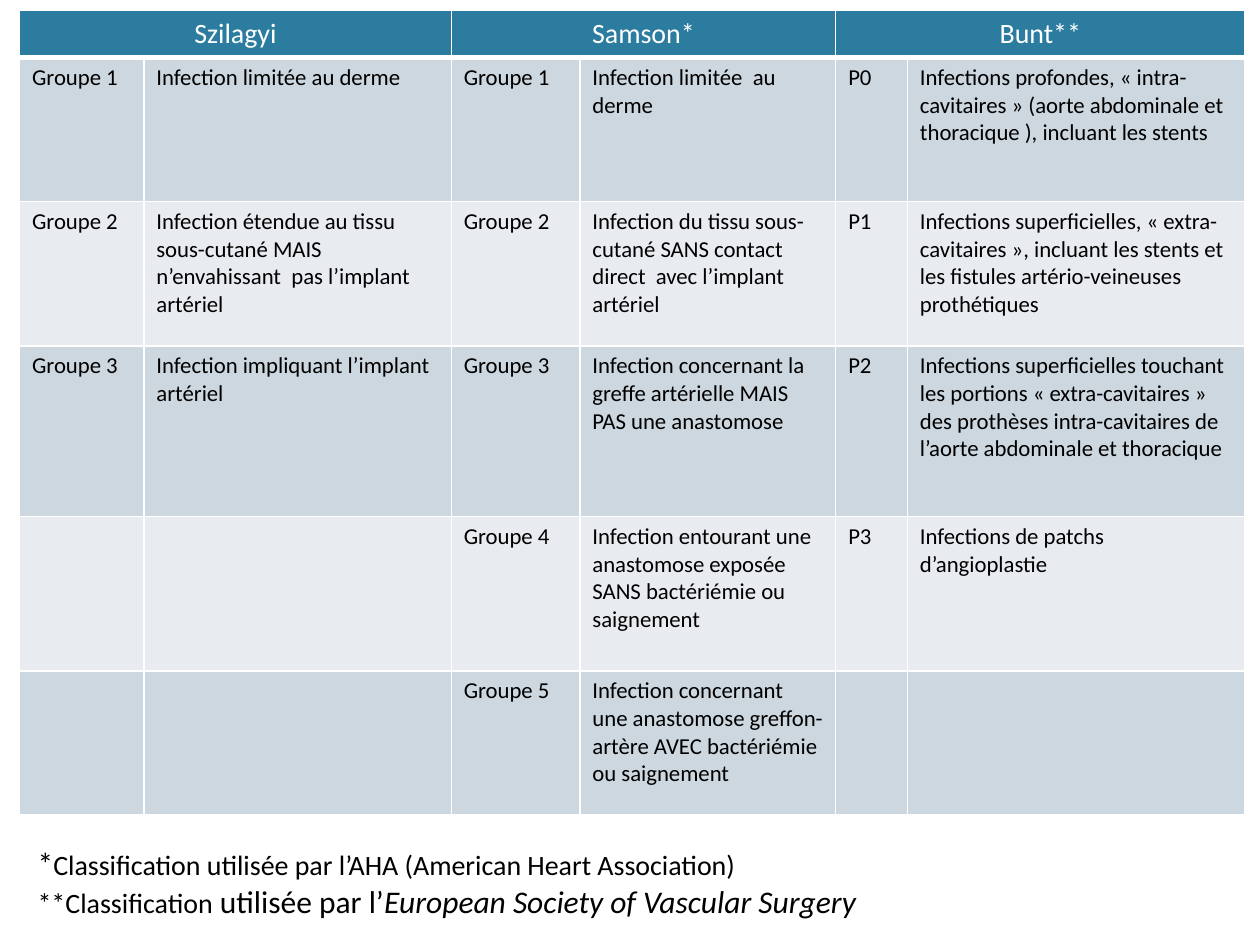
from lxml.etree import SubElement
from pptx import Presentation
from pptx.dml.color import RGBColor
from pptx.enum.text import PP_ALIGN
from pptx.oxml.ns import qn
from pptx.util import Pt

FONT = "Calibri"
WHITE = RGBColor(0xFF, 0xFF, 0xFF)
BLACK = RGBColor(0, 0, 0)
HEADER_BLUE = RGBColor(0x2C, 0x7C, 0x9F)
BANDS = [RGBColor(0xCD, 0xD7, 0xDF), RGBColor(0xE8, 0xEC, 0xF0)]

COLUMN_WIDTHS = [71, 175.7, 73.5, 146.2, 41, 193]
ROW_HEIGHTS = [26.3, 82.3, 82.5, 97.5, 88.3, 82.1]
HEADERS = ["Szilagyi", "Samson*", "Bunt**"]
ROWS = [
    ["Groupe 1", "Infection limitée au derme",
     "Groupe 1", "Infection limitée  au derme",
     "P0", "Infections profondes, « intra-cavitaires » (aorte abdominale et "
     "thoracique ), incluant les stents"],
    ["Groupe 2", "Infection étendue au tissu sous-cutané MAIS n’envahissant  pas "
     "l’implant artériel",
     "Groupe 2", "Infection du tissu sous-cutané SANS contact direct  avec "
     "l’implant artériel",
     "P1", "Infections superficielles, « extra-cavitaires », incluant les stents "
     "et les fistules artério-veineuses prothétiques"],
    ["Groupe 3", "Infection impliquant l’implant artériel",
     "Groupe 3", "Infection concernant la greffe artérielle MAIS PAS une anastomose",
     "P2", "Infections superficielles touchant les portions « extra-cavitaires » "
     "des prothèses intra-cavitaires de l’aorte abdominale et thoracique"],
    ["", "",
     "Groupe 4", "Infection entourant une anastomose exposée SANS bactériémie ou "
     "saignement",
     "P3", "Infections de patchs d’angioplastie"],
    ["", "",
     "Groupe 5", "Infection concernant une anastomose greffon-artère AVEC "
     "bactériémie ou saignement",
     "", ""],
]
# Each note is a list of (text, size, italic) spans.
NOTES = [
    [("*", 18, False),
     ("Classification utilisée par l’AHA (American Heart Association)", 16, False)],
    [("**Classification", 16, False), (" utilisée par l’", 18, False),
     ("European Society of Vascular Surgery", 18, True)],
]


def style_font(font, size, color, italic=False):
    font.name = FONT
    font.size = Pt(size)
    font.bold = False
    font.italic = italic
    font.color.rgb = color


def set_borders(cell, bottom_width=1):
    """Draw white cell borders; call before the fill, which must follow them."""
    properties = cell._tc.get_or_add_tcPr()
    for side, width in (("L", 1), ("R", 1), ("T", 1), ("B", bottom_width)):
        line = SubElement(properties, qn(f"a:ln{side}"), w=str(Pt(width)))
        fill = SubElement(line, qn("a:solidFill"))
        SubElement(fill, qn("a:srgbClr"), val=str(WHITE))


def fill_cell(cell, text, size, text_color, fill_color):
    cell.fill.solid()
    cell.fill.fore_color.rgb = fill_color
    paragraph = cell.text_frame.paragraphs[0]
    paragraph.text = text
    style_font(paragraph.font, size, text_color)
    for span in paragraph.runs:
        style_font(span.font, size, text_color)
    return paragraph


def add_classification_table(page):
    frame = page.shapes.add_table(
        len(ROW_HEIGHTS), len(COLUMN_WIDTHS), Pt(11.2), Pt(6),
        Pt(sum(COLUMN_WIDTHS)), Pt(sum(ROW_HEIGHTS)))
    table = frame.table
    table.horz_banding = False
    for column, width in zip(table.columns, COLUMN_WIDTHS):
        column.width = Pt(width)
    for row, height in zip(table.rows, ROW_HEIGHTS):
        row.height = Pt(height)

    for index, header in enumerate(HEADERS):
        first, second = (table.cell(0, 2 * index + side) for side in (0, 1))
        first.merge(second)
        for cell in (first, second):
            set_borders(cell, bottom_width=3)
        paragraph = fill_cell(first, header, 16, WHITE, HEADER_BLUE)
        paragraph.alignment = PP_ALIGN.CENTER

    for row_index, texts in enumerate(ROWS):
        for column_index, text in enumerate(texts):
            cell = table.cell(row_index + 1, column_index)
            set_borders(cell)
            fill_cell(cell, text, 13, BLACK, BANDS[row_index % 2])


def add_notes_box(page):
    box = page.shapes.add_textbox(Pt(14.4), Pt(479), Pt(697.7), Pt(56))
    text_frame = box.text_frame
    text_frame.word_wrap = True
    for index, spans in enumerate(NOTES):
        paragraph = text_frame.add_paragraph() if index else text_frame.paragraphs[0]
        for text, size, italic in spans:
            span = paragraph.add_run()
            span.text = text
            style_font(span.font, size, BLACK, italic)


def main():
    deck = Presentation()
    deck.slide_width, deck.slide_height = Pt(720), Pt(540)
    page = deck.slides.add_slide(deck.slide_layouts[6])
    add_classification_table(page)
    add_notes_box(page)
    deck.save("out.pptx")


if __name__ == "__main__":
    main()
